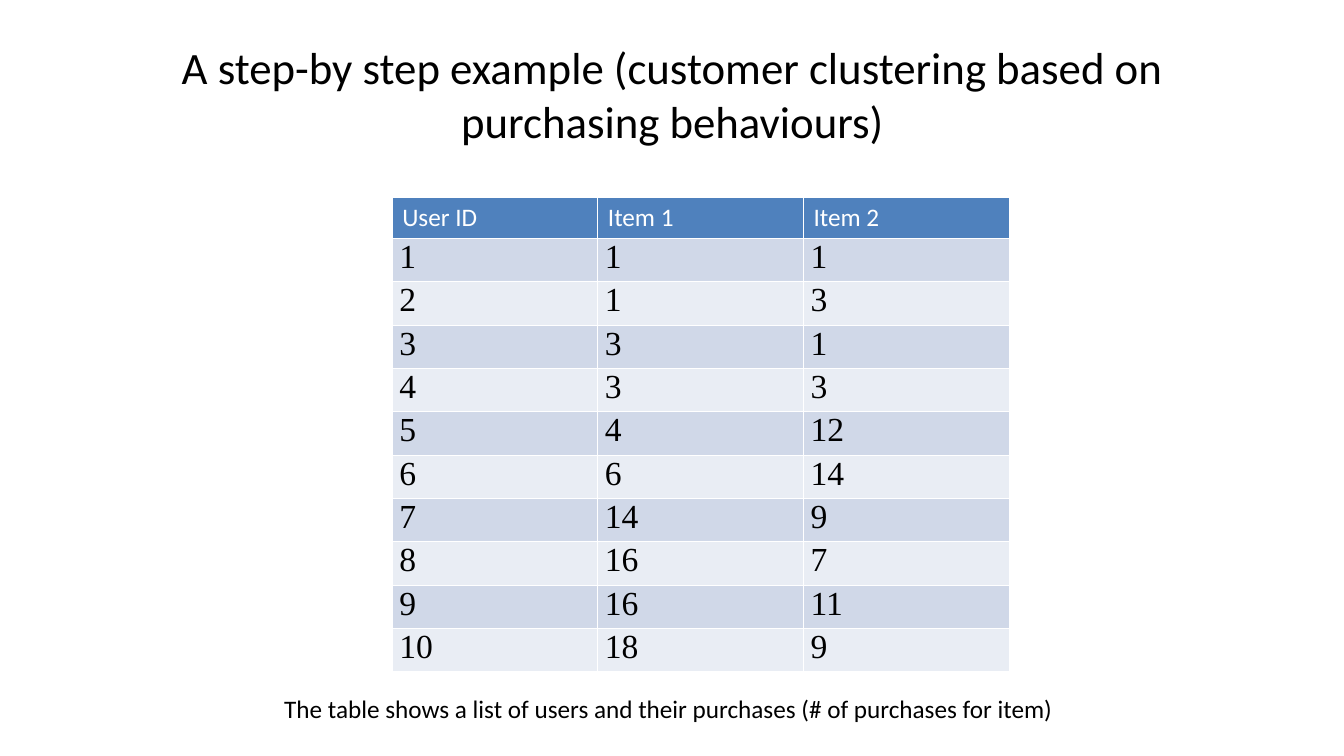
from pptx import Presentation
from pptx.dml.color import RGBColor
from pptx.enum.text import MSO_ANCHOR as Anchor, PP_ALIGN as Align
from pptx.util import Inches, Pt

# Content
TITLE = "A step-by step example (customer clustering based on purchasing behaviours)"
CAPTION = "The table shows a list of users and their purchases (# of purchases for item)"
HEADERS = ("User ID", "Item 1", "Item 2")
PURCHASES = [(1, 1), (1, 3), (3, 1), (3, 3), (4, 12),
             (6, 14), (14, 9), (16, 7), (16, 11), (18, 9)]

# Layout and colours
TABLE_LEFT, TABLE_TOP, COLUMN_WIDTH = 3.89, 1.96, 2.04
HEADER_HEIGHT, ROW_HEIGHT = 0.33, 0.43
BLACK, WHITE = "000000", "FFFFFF"
HEADER_FILL, BAND_FILLS = "4F81BD", ("D0D8E8", "E9EDF4")


def color(hex_code):
    return RGBColor.from_string(hex_code)


def set_font(paragraph, size, name="Calibri", hex_code=BLACK):
    font = paragraph.font
    font.size, font.name, font.bold = Pt(size), name, False
    font.color.rgb = color(hex_code)


def add_text(slide, box, text, size, align, anchor, wrap):
    frame = slide.shapes.add_textbox(*map(Inches, box)).text_frame
    frame.word_wrap = wrap
    frame.vertical_anchor = anchor
    paragraph = frame.paragraphs[0]
    paragraph.text = text
    paragraph.alignment = align
    set_font(paragraph, size)


def add_purchase_table(slide):
    rows = [HEADERS] + [(user, *items) for user, items in enumerate(PURCHASES, 1)]
    heights = [HEADER_HEIGHT] + [ROW_HEIGHT] * len(PURCHASES)
    box = (TABLE_LEFT, TABLE_TOP, COLUMN_WIDTH * len(HEADERS), sum(heights))
    # The default table style supplies the white cell borders
    table = slide.shapes.add_table(len(rows), len(HEADERS), *map(Inches, box)).table
    for column in table.columns:
        column.width = Inches(COLUMN_WIDTH)

    for row_index, values in enumerate(rows):
        table.rows[row_index].height = Inches(heights[row_index])
        for column_index, value in enumerate(values):
            cell = table.cell(row_index, column_index)
            cell.text = str(value)
            paragraph = cell.text_frame.paragraphs[0]
            cell.fill.solid()
            if row_index == 0:
                cell.fill.fore_color.rgb = color(HEADER_FILL)
                set_font(paragraph, 18, hex_code=WHITE)
            else:
                cell.fill.fore_color.rgb = color(BAND_FILLS[(row_index - 1) % 2])
                cell.margin_left = cell.margin_right = Inches(0.07)
                cell.margin_top = cell.margin_bottom = 0
                set_font(paragraph, 24, "Times New Roman")


def main():
    presentation = Presentation()
    presentation.slide_width, presentation.slide_height = Inches(13.33), Inches(7.5)
    slide = presentation.slides.add_slide(presentation.slide_layouts[6])

    add_purchase_table(slide)
    add_text(slide, (0.67, 0.3, 12, 1.25), TITLE, 32, Align.CENTER, Anchor.MIDDLE, True)
    add_text(slide, (2.72, 6.83, 7.85, 0.4), CAPTION, 18, Align.LEFT, Anchor.TOP, False)

    presentation.save("out.pptx")


if __name__ == "__main__":
    main()
